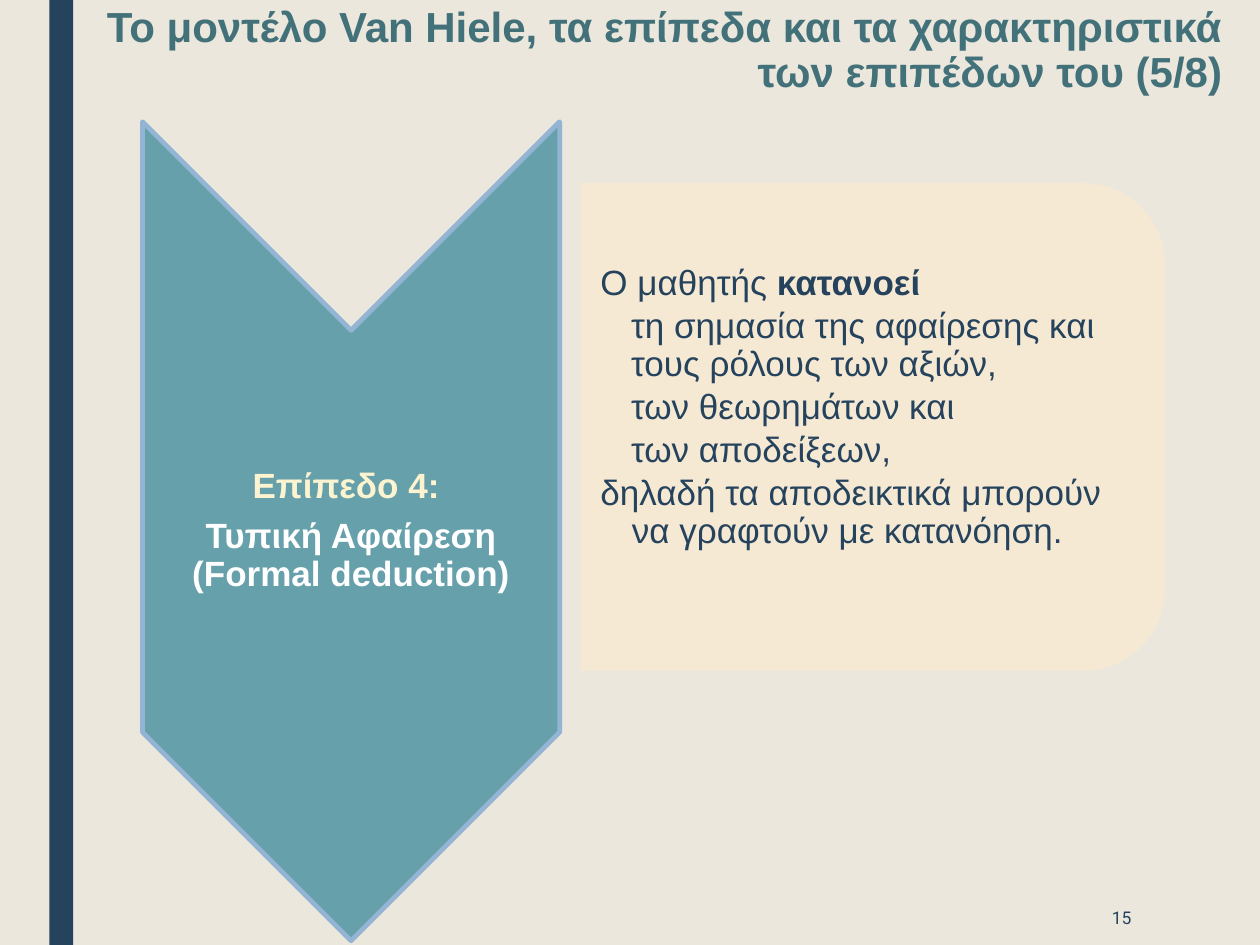
from dataclasses import dataclass

from lxml import etree
from pptx import Presentation
from pptx.dml.color import RGBColor
from pptx.enum.shapes import MSO_SHAPE
from pptx.enum.text import MSO_ANCHOR, MSO_AUTO_SIZE, PP_ALIGN
from pptx.oxml.ns import qn
from pptx.util import Pt

LEFT, CENTER, RIGHT, JUSTIFY = PP_ALIGN.LEFT, PP_ALIGN.CENTER, PP_ALIGN.RIGHT, PP_ALIGN.JUSTIFY
TOP, MIDDLE = MSO_ANCHOR.TOP, MSO_ANCHOR.MIDDLE
RECTANGLE, CHEVRON = MSO_SHAPE.RECTANGLE, MSO_SHAPE.CHEVRON
ROUND_TOP = MSO_SHAPE.ROUND_2_SAME_RECTANGLE
TITLE_ONLY = 5


@dataclass(frozen=True)
class Theme:
    background: str = "EBE7DD"
    navy: str = "26435D"
    title: str = "437179"
    teal: str = "66A0AA"
    outline: str = "93B5D3"
    cream: str = "F8EAD4"
    level: str = "FCF3D1"
    white: str = "FFFFFF"
    font: str = "Arial"
    number_font: str = "Roboto"
    title_size: float = 24
    body_size: float = 20
    number_size: float = 10


THEME = Theme()


@dataclass(frozen=True)
class Area:
    """Place and size in points."""
    left: float
    top: float
    width: float
    height: float


@dataclass(frozen=True)
class Line:
    """One paragraph; bold_tail is a bold ending to its text."""
    text: str
    color: str = THEME.navy
    size: float = THEME.body_size
    font: str = THEME.font
    bold: bool = False
    bold_tail: str = ""
    align: PP_ALIGN = LEFT
    spacing: float = 0.9
    after: float = 0
    margin: float = 0
    indent: float = 0


def place(shape, area: Area) -> None:
    shape.left, shape.top = Pt(area.left), Pt(area.top)
    shape.width, shape.height = Pt(area.width), Pt(area.height)


def add_figure(page, kind, area: Area, fill: str, rotation: float = 0):
    figure = page.shapes.add_shape(kind, 0, 0, 0, 0)
    place(figure, area)
    figure.rotation = rotation
    figure.shadow.inherit = False
    figure.fill.solid()
    figure.fill.fore_color.rgb = RGBColor.from_string(fill)
    figure.line.fill.background()
    return figure


def write(box, lines: list[Line], anchor=MIDDLE, insets=(7.2, 3.6, 7.2, 3.6)) -> None:
    """Fill a box with lines; insets are left, top, right, bottom."""
    frame = box.text_frame
    frame.text = "\n".join(line.text for line in lines)
    frame.word_wrap = True
    frame.auto_size = MSO_AUTO_SIZE.NONE
    frame.vertical_anchor = anchor
    (frame.margin_left, frame.margin_top,
     frame.margin_right, frame.margin_bottom) = map(Pt, insets)
    for para, line in zip(frame.paragraphs, lines):
        para.alignment = line.align
        para.line_spacing = line.spacing
        para.space_before, para.space_after = Pt(0), Pt(line.after)
        properties = para._p.get_or_add_pPr()
        properties.set("marL", str(Pt(line.margin)))
        properties.set("indent", str(Pt(line.indent)))
        if line.bold_tail:
            para.add_run().text = line.bold_tail
        for position, span in enumerate(para.runs):
            span.font.name = line.font
            span.font.size = Pt(line.size)
            span.font.bold = line.bold or position > 0
            span.font.color.rgb = RGBColor.from_string(line.color)


def add_text(page, area: Area, lines: list[Line], **options) -> None:
    box = page.shapes.add_textbox(0, 0, 0, 0)
    place(box, area)
    write(box, lines, **options)


def level_line(text: str, color: str) -> Line:
    return Line(text, color, bold=True, align=CENTER, after=7)


def hanging_line(text: str, **options) -> Line:
    return Line(text, after=3, margin=18, indent=-18, **options)


def item_line(text: str) -> Line:
    return Line(text, after=3, margin=17.5)


def main() -> None:
    deck = Presentation()
    deck.slide_width, deck.slide_height = Pt(720), Pt(540)
    page = deck.slides.add_slide(deck.slide_layouts[TITLE_ONLY])
    page.background.fill.solid()
    page.background.fill.fore_color.rgb = RGBColor.from_string(THEME.background)

    add_figure(page, RECTANGLE, Area(28.2, 0, 13.6, 540), THEME.navy)
    place(page.shapes.title, Area(48.2, 0, 657.4, 71.3))
    write(page.shapes.title, [
        Line("Το μοντέλο Van Hiele, τα επίπεδα και τα χαρακτηριστικά των επιπέδων του (5/8)",
             THEME.title, THEME.title_size, bold=True, align=RIGHT, spacing=0.89),
    ], anchor=TOP)

    arrow = add_figure(page, CHEVRON, Area(-33.4, 184.4, 468, 238.4), THEME.teal, 90)
    arrow.line.color.rgb = RGBColor.from_string(THEME.outline)
    arrow.line.width = Pt(2.75)
    add_text(page, Area(81.4, 188.6, 238.3, 229.7), [
        level_line("Επίπεδο 4: ", THEME.level),
        level_line("Τυπική Αφαίρεση (Formal deduction)", THEME.white),
    ], insets=(0.9, 0.9, 0.9, 0.9))

    panel = add_figure(page, ROUND_TOP, Area(359.4, 77, 278.6, 334), THEME.cream, 90)
    tint = panel.fill._xPr.find(qn("a:solidFill"))[0]
    etree.SubElement(tint, qn("a:alpha")).set("val", "90000")
    # The deep bottom inset lifts the text above the middle of the panel.
    add_text(page, Area(331.9, 118.1, 320.4, 251.3), [
        hanging_line("Ο μαθητής ", bold_tail="κατανοεί", align=JUSTIFY),
        item_line("τη σημασία της αφαίρεσης και τους ρόλους των αξιών,"),
        item_line("των θεωρημάτων και"),
        item_line("των αποδείξεων,"),
        hanging_line("δηλαδή τα αποδεικτικά μπορούν να γραφτούν με κατανόηση."),
    ], insets=(11.2, 0.9, 0.9, 22))

    add_text(page, Area(559.4, 508.3, 94.3, 31.7), [
        Line("15", size=THEME.number_size, font=THEME.number_font, align=RIGHT, spacing=1),
    ])
    deck.save("out.pptx")


if __name__ == "__main__":
    main()
